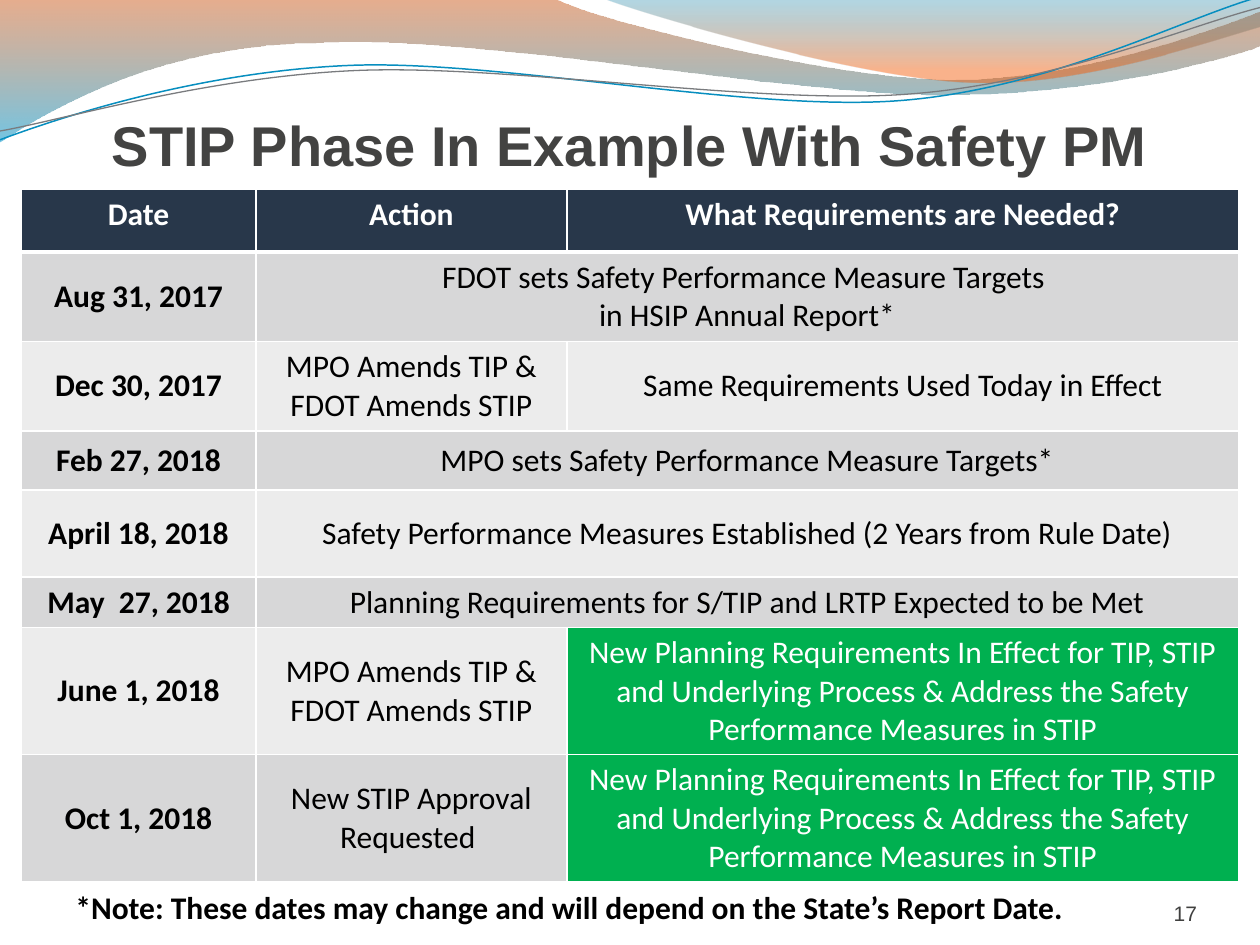
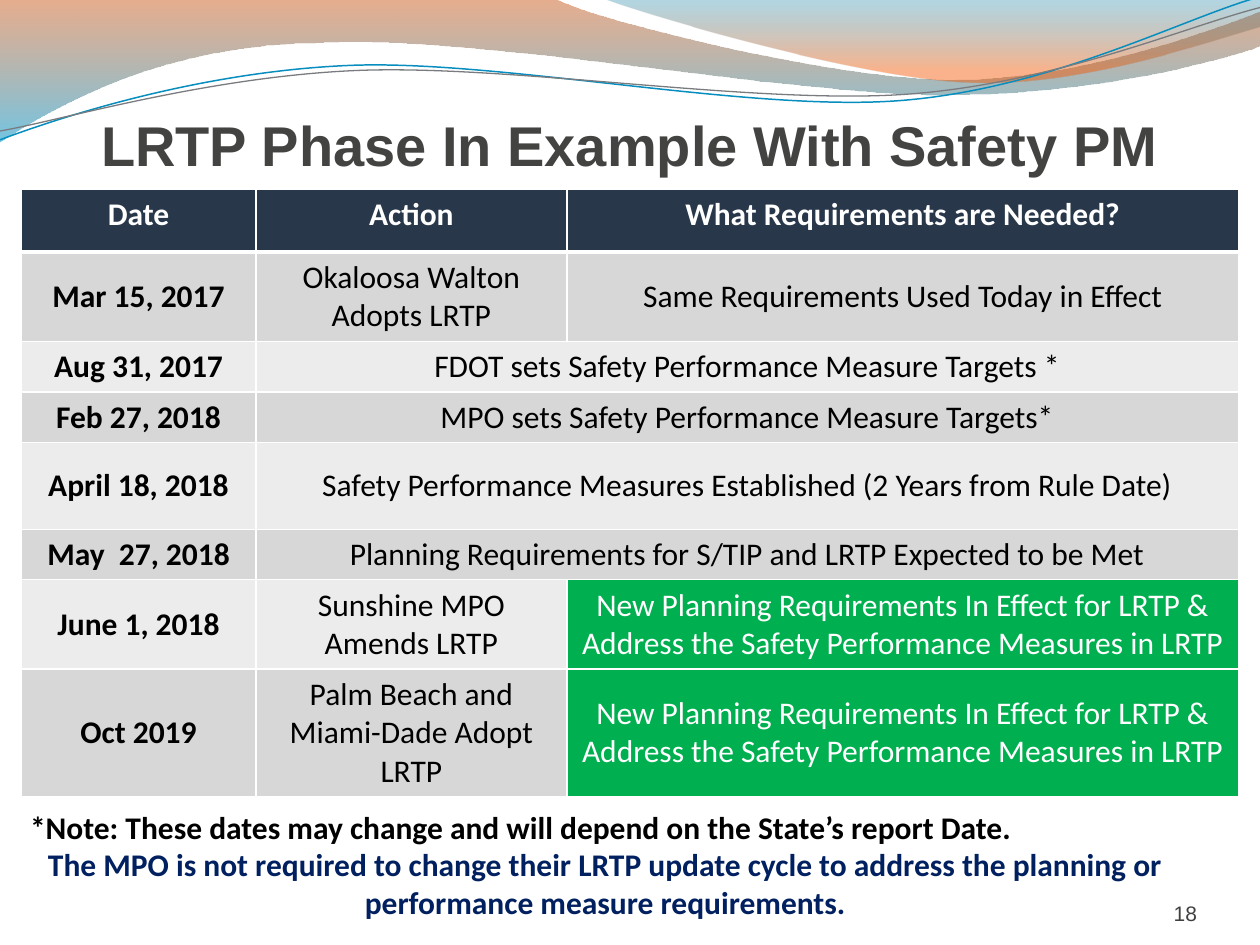
from lxml.etree import SubElement
from pptx import Presentation
from pptx.dml.color import RGBColor
from pptx.enum.text import MSO_ANCHOR, PP_ALIGN
from pptx.oxml import parse_xml
from pptx.oxml.ns import nsdecls, qn
from pptx.util import Emu, Pt

PX = 9144

WHITE = RGBColor(0xFF, 0xFF, 0xFF)
BLACK = RGBColor(0, 0, 0)
NAVY = RGBColor(0x28, 0x37, 0x4A)
DARK_BLUE = RGBColor(0x00, 0x20, 0x60)
GREEN = RGBColor(0x00, 0xB0, 0x50)
TITLE_GREY = RGBColor(0x43, 0x43, 0x42)
NUMBER_GREY = RGBColor(0x40, 0x40, 0x3F)
BANDS = (RGBColor(0xD7, 0xD7, 0xD8), RGBColor(0xEC, 0xEC, 0xEC))
RUST = RGBColor(0xC9, 0x4A, 0x04)
SKY = RGBColor(0x00, 0x95, 0xCC)
OCEAN = RGBColor(0x00, 0x7A, 0xA6)
ORANGE = RGBColor(0xF4, 0x57, 0x00)
LINE_BLUE = RGBColor(0x07, 0x8E, 0xBF)
LINE_GREY = RGBColor(0x79, 0x7B, 0x7E)

TITLE_BOX = (50, 83, 900, 83)
NUMBER_BOX = (867, 695, 83, 40)
TABLE_BOX = (17, 150, 966)
COLUMN_WIDTHS = (186, 247, 533)
HEADER = (50, "Date", "Action", "What Requirements are Needed?")

LEFT_WAVE = [
    (0, -1), (440, -1),
    (476, 17, 664, 63, 758, 63), (853, 63, 958, 26, 1000, 9),
    (1001, 36),
    (983, 44, 870, 76, 746, 75), (622, 75, 382, 28, 257, 34),
    (129, 35, 46, 83, -1, 113), (0, -1),
]
RIGHT_WAVE = [
    (479, -1),
    (509, 11, 682, 62, 769, 65), (856, 69, 961, 32, 1000, 21),
    (1000, 0), (479, -1),
]
BLUE_LINE = [
    (0, 111),
    (48, 93, 158, 57, 277, 52), (395, 47, 593, 89, 713, 80),
    (833, 71, 938, 15, 998, -2),
]
GREY_LINE = [
    (0, 104),
    (47, 96, 164, 61, 283, 56), (403, 51, 597, 83, 717, 75),
    (836, 67, 941, 21, 1000, 6),
]

SAME_TODAY = "Same Requirements Used Today in Effect"
AMENDS_STIP = "MPO Amends TIP & FDOT Amends STIP"
NEW_PREFIX = "New Planning Requirements In Effect for "
NEW_STIP = NEW_PREFIX + (
    "TIP, STIP and Underlying Process & Address the Safety Performance Measures in STIP"
)
NEW_LRTP = NEW_PREFIX + "LRTP & Address the Safety Performance Measures in LRTP"
MPO_TARGETS = "MPO sets Safety Performance Measure Targets*"
SHARED_ROWS = [
    (69, "April 18, 2018", "Safety Performance Measures Established (2 Years from Rule Date)"),
    (40, "May  27, 2018", "Planning Requirements for S/TIP and LRTP Expected to be Met"),
]
STIP_ROWS = [
    (71, "Aug 31, 2017",
     "FDOT sets Safety Performance Measure Targets \nin HSIP Annual Report*"),
    (71, "Dec 30, 2017", AMENDS_STIP, SAME_TODAY),
    (47, "Feb 27, 2018", MPO_TARGETS),
    *SHARED_ROWS,
    (101, "June 1, 2018", AMENDS_STIP, NEW_STIP),
    (101, "Oct 1, 2018", "New STIP Approval Requested ", NEW_STIP),
]
LRTP_ROWS = [
    (71, "Mar 15, 2017", "Okaloosa Walton Adopts LRTP", SAME_TODAY),
    (40, "Aug 31, 2017", "FDOT sets Safety Performance Measure Targets *"),
    (40, "Feb 27, 2018", MPO_TARGETS),
    *SHARED_ROWS,
    (71, "June 1, 2018", "Sunshine MPO Amends LRTP", NEW_LRTP),
    (101, "Oct 2019", "Palm Beach and Miami-Dade Adopt LRTP", NEW_LRTP),
]


def px(value):
    return Emu(value * PX)


def add_outline(slide, segments, close):
    points = [pair for segment in segments for pair in zip(segment[::2], segment[1::2])]
    builder = slide.shapes.build_freeform(*points[0], scale=PX)
    builder.add_line_segments(points[1:], close=close)
    shape = builder.convert_to_shape()
    shape.shadow.inherit = False
    bend_curves(shape, segments)
    return shape


def bend_curves(shape, segments):
    lines = shape.element.spPr.findall(".//" + qn("a:lnTo"))
    for segment in segments[1:]:
        count = len(segment) // 2
        group, lines = lines[:count], lines[count:]
        if count == 3:
            curve = parse_xml(f'<a:cubicBezTo {nsdecls("a")}/>')
            group[0].addprevious(curve)
            for line in group:
                curve.append(line[0])
                line.getparent().remove(line)


def add_wave(slide, segments, stops):
    shape = add_outline(slide, segments, True)
    shape.line.fill.background()
    shape.fill.gradient()
    shape.fill.gradient_angle = 270
    for stop, (position, color, _) in zip(shape.fill.gradient_stops, stops):
        stop.position = position
        stop.color.rgb = color
    colors = shape.element.spPr.iter(qn("a:srgbClr"))
    for element, (_, _, opacity) in zip(colors, stops):
        SubElement(element, qn("a:alpha")).set("val", str(opacity * 1000))


def add_wave_line(slide, segments, color, width):
    shape = add_outline(slide, segments, False)
    shape.fill.background()
    shape.line.color.rgb = color
    shape.line.width = Pt(width)


def add_banner(slide):
    add_wave(slide, LEFT_WAVE, [(0, RUST, 45), (1, SKY, 55)])
    add_wave(slide, RIGHT_WAVE, [(0, OCEAN, 30), (0.8, ORANGE, 45)])
    add_wave_line(slide, BLUE_LINE, LINE_BLUE, 0.85)
    add_wave_line(slide, GREY_LINE, LINE_GREY, 0.75)


def write(paragraph, text, size, color, bold=False, font="Calibri", align=PP_ALIGN.CENTER):
    paragraph.alignment = align
    run = paragraph.add_run()
    run.text = text
    run.font.name = font
    run.font.size = Pt(size)
    run.font.bold = bold
    run.font.color.rgb = color


def add_text_frame(slide, box, insets=None, anchor=MSO_ANCHOR.TOP):
    frame = slide.shapes.add_textbox(*map(px, box)).text_frame
    frame.word_wrap = True
    frame.vertical_anchor = anchor
    if insets:
        (frame.margin_left, frame.margin_top,
         frame.margin_right, frame.margin_bottom) = map(px, insets)
    return frame


def add_title(slide, box, text):
    frame = add_text_frame(slide, box, (0, 5, 0, 0))
    write(frame.paragraphs[0], text, 32, TITLE_GREY, True, "Arial")


def add_slide_number(slide, box, number):
    frame = add_text_frame(slide, box, (0, 0, 0, 0), MSO_ANCHOR.BOTTOM)
    write(frame.paragraphs[0], str(number), 12, NUMBER_GREY, False, "Arial", PP_ALIGN.RIGHT)


def add_notes_below(slide, box, notes):
    frame = add_text_frame(slide, box)
    for index, (text, color, align) in enumerate(notes):
        paragraph = frame.add_paragraph() if index else frame.paragraphs[0]
        write(paragraph, text, 18, color, True, align=align)


def set_borders(cell, top, bottom):
    properties = cell._tc.get_or_add_tcPr()
    for index, (side, width) in enumerate(zip("LRTB", (1, 1, top, bottom))):
        properties.insert(index, parse_xml(
            f'<a:ln{side} {nsdecls("a")} w="{Pt(width)}"><a:solidFill>'
            f'<a:srgbClr val="{WHITE}"/></a:solidFill></a:ln{side}>'))


def fill_cell(cell, text, row, column):
    if row == 0:
        fill, color = NAVY, WHITE
    elif text.startswith(NEW_PREFIX):
        fill, color = GREEN, WHITE
    else:
        fill, color = BANDS[(row - 1) % 2], BLACK
    cell.fill.solid()
    cell.fill.fore_color.rgb = fill
    set_borders(cell, 3 if row == 1 else 1, 3 if row == 0 else 1)
    cell.vertical_anchor = MSO_ANCHOR.MIDDLE if row else MSO_ANCHOR.TOP
    for index, line in enumerate(text.split("\n") if text else []):
        frame = cell.text_frame
        paragraph = frame.add_paragraph() if index else frame.paragraphs[0]
        write(paragraph, line, 18, color, row == 0 or column == 0)


def add_schedule(slide, box, body_rows):
    left, top, width = box
    rows = [HEADER, *body_rows]
    height = sum(row[0] for row in rows)
    table = slide.shapes.add_table(
        len(rows), len(COLUMN_WIDTHS), px(left), px(top), px(width), px(height)).table
    for column, column_width in zip(table.columns, COLUMN_WIDTHS):
        column.width = px(column_width)
    for row, (row_height, *texts) in enumerate(rows):
        table.rows[row].height = px(row_height)
        if len(texts) == 2:
            table.cell(row, 1).merge(table.cell(row, 2))
            texts.append("")
        for column, text in enumerate(texts):
            fill_cell(table.cell(row, column), text, row, column)


def add_phase_slide(presentation, number, title, rows, notes_box, notes):
    slide = presentation.slides.add_slide(presentation.slide_layouts[6])
    add_banner(slide)
    add_title(slide, TITLE_BOX, title)
    add_slide_number(slide, NUMBER_BOX, number)
    add_schedule(slide, TABLE_BOX, rows)
    add_notes_below(slide, notes_box, notes)


def main():
    presentation = Presentation()
    presentation.slide_width = px(1000)
    presentation.slide_height = px(750)
    add_phase_slide(
        presentation, 17, "STIP Phase In Example With Safety PM", STIP_ROWS, (50, 700, 867, 40),
        [("*Note: These dates may change and will depend on the State’s Report Date.",
          BLACK, PP_ALIGN.LEFT)])
    add_phase_slide(
        presentation, 18, "LRTP Phase In Example With Safety PM", LRTP_ROWS, (14, 636, 933, 101),
        [("*Note: These dates may change and will depend on the State’s report Date.",
          BLACK, PP_ALIGN.LEFT),
         ("The MPO is not required to change their LRTP update cycle to address the planning "
          "or performance measure requirements.", DARK_BLUE, PP_ALIGN.CENTER)])
    presentation.save("out.pptx")


if __name__ == "__main__":
    main()
